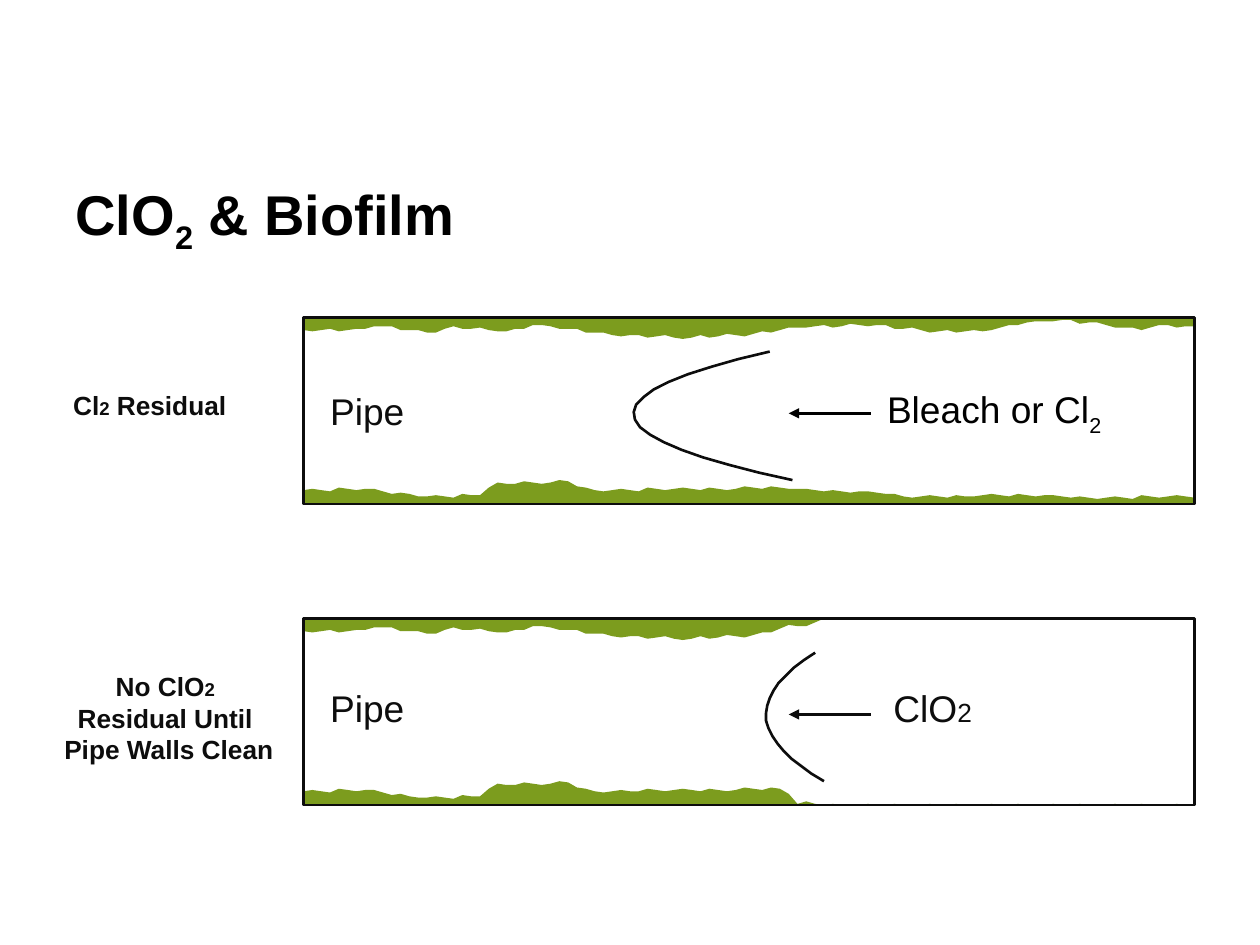
from collections import namedtuple
from itertools import cycle

from lxml import etree
from pptx import Presentation, util as u
from pptx.dml.color import RGBColor
from pptx.enum import shapes, text
from pptx.oxml.ns import qn

PX = 9144  # 100 px to the inch
COLORS = {"black": "000000", "ink": "0D0D0D", "film": "7C9C1E"}

PIPE_X, PIPE_W, PIPE_H = 241, 707, 148
FIRST_PIPE_Y, PIPE_PITCH = 252, 239
FRONT_DROP, ARROW_DROP = 27, 76  # below the top of the pipe
ARROW_FROM, ARROW_TO = 691, 626

# Main humps of the film: distance along the pipe -> thickness
TOP_THICK = {0: 10, 48: 10, 53: 6, 74: 8, 95: 12, 122: 8, 162: 11, 183: 6,
             218: 10, 247: 14, 306: 16, 359: 13}
TOP_LEFT = {401: 7, 454: 6, 497: 11, 539: 11, 567: 5, 597: 2, 630: 5,
            661: 9, 686: 6, 707: 8}
TOP_CLEANED = {384: 6, 401: 5, 414: 1, 424: 0, 707: 0}
BOTTOM_THICK = {0: 11, 46: 12, 78: 8, 102: 6, 138: 7, 152: 16, 211: 18,
                227: 11, 383: 13}
BOTTOM_LEFT = {401: 11, 460: 9, 472: 6, 586: 7, 620: 5, 707: 6}
BOTTOM_CLEANED = {392: 1, 401: 2, 420: 0, 707: 0}
RIPPLE = (0, 1, 0, -1, 1, 0, -1)  # small roughness laid over the humps
RIPPLE_STEP = 7

# Flow front: a parabola lying on its side
FRONT_H, FRONT_STEP, FRONT_AXIS, FRONT_CURVE = 102, 6, 49, 0.045

Run = namedtuple("Run", "words size sub", defaults=(None, False))
Label = namedtuple("Label", "x y w h")
Pipe = namedtuple("Pipe", "top bottom name_y tip_x stretch dose dose_at color")


def thickness(humps, x):
    """Straight-line value between the two humps on either side of x."""
    stations = sorted(humps)
    for a, b in zip(stations, stations[1:]):
        if a <= x <= b:
            return humps[a] + (humps[b] - humps[a]) * (x - a) / (b - a)


def rough_edge(humps):
    """Points (distance, thickness) at equal steps along the pipe."""
    distances = range(0, PIPE_W + 1, RIPPLE_STEP)
    return [(x, max(0, thickness(humps, x) + bump))
            for x, bump in zip(distances, cycle(RIPPLE))]


class Sketch:
    def __init__(self, s, font="Arial", line=1.5):
        self.s, self.font, self.line = s, font, line

    def color(self, name):
        return RGBColor.from_string(COLORS[name])

    def stroke(self, sp, color="ink"):
        sp.line.color.rgb = self.color(color)
        sp.line.width = u.Pt(self.line)

    def label(self, at, paras, size, color="ink", bold=False,
              align=text.PP_ALIGN.LEFT, inset=(0, 0), anchor=text.MSO_ANCHOR.TOP):
        sp = self.s.shapes.add_textbox(*(v * PX for v in at))
        tf = sp.text_frame
        tf.word_wrap = True
        tf.vertical_anchor = anchor
        tf.margin_left = tf.margin_right = inset[0] * PX
        tf.margin_top = tf.margin_bottom = inset[1] * PX
        for i, runs in enumerate(paras):
            p = tf.add_paragraph() if i else tf.paragraphs[0]
            p.alignment = align
            for run in runs:
                r = p.add_run()
                r.text = run.words
                r.font.name, r.font.bold = self.font, bold
                r.font.size = u.Pt(run.size or size)
                r.font.color.rgb = self.color(color)
                if run.sub:
                    r.font._element.set("baseline", "-25000")

    def outline(self, points, closed):
        fb = self.s.shapes.build_freeform(*points[0], scale=PX)
        fb.add_line_segments(points[1:], close=closed)
        sp = fb.convert_to_shape()
        sp.shadow.inherit = False
        return sp

    def film(self, wall_y, direction, humps):
        """Biofilm on a wall; direction 1 grows down, -1 grows up."""
        edge = [(PIPE_X + x, wall_y + direction * depth)
                for x, depth in rough_edge(humps)]
        wall = [(PIPE_X + PIPE_W, wall_y), (PIPE_X, wall_y)]
        sp = self.outline(edge + wall, True)
        sp.fill.solid()
        sp.fill.fore_color.rgb = self.color("film")
        sp.line.fill.background()

    def pipe(self, y):
        sp = self.s.shapes.add_shape(shapes.MSO_SHAPE.RECTANGLE, PIPE_X * PX, y * PX,
                                     PIPE_W * PX, PIPE_H * PX)
        sp.shadow.inherit = False
        sp.fill.background()
        self.stroke(sp)

    def front(self, tip_x, y, stretch):
        points = [(tip_x + stretch * FRONT_CURVE * (dy - FRONT_AXIS) ** 2, y + dy)
                  for dy in range(0, FRONT_H + 1, FRONT_STEP)]
        sp = self.outline(points, False)
        sp.fill.background()
        self.stroke(sp)

    def arrow(self, x1, x2, y, color):
        c = self.s.shapes.add_connector(shapes.MSO_CONNECTOR.STRAIGHT,
                                        x1 * PX, y * PX, x2 * PX, y * PX)
        self.stroke(c, color)
        etree.SubElement(c.line._get_or_add_ln(), qn("a:tailEnd"), type="triangle")
        etree.SubElement(c._element.spPr, qn("a:effectLst"))


def main():
    prs = Presentation()
    prs.slide_width, prs.slide_height = 1000 * PX, 750 * PX
    sk = Sketch(prs.slides.add_slide(prs.slide_layouts[6]))
    subscript, small_two = Run("2", sub=True), Run("2", 10.6)

    sk.label(Label(50, 134, 900, 78), [[Run("ClO"), subscript, Run(" & Biofilm")]],
             32, "black", True, inset=(10, 5), anchor=text.MSO_ANCHOR.MIDDLE)

    bleach = Pipe(top={**TOP_THICK, **TOP_LEFT}, bottom={**BOTTOM_THICK, **BOTTOM_LEFT},
                  name_y=308, tip_x=503, stretch=1, dose=[Run("Bleach or Cl"), subscript],
                  dose_at=Label(704, 307, 177, 42), color="black")
    dioxide = Pipe(top={**TOP_THICK, **TOP_CLEANED},
                   bottom={**BOTTOM_THICK, **BOTTOM_CLEANED},
                   name_y=544, tip_x=608, stretch=0.365, dose=[Run("ClO"), Run("2", 15)],
                   dose_at=Label(709, 544, 106, 42), color="ink")
    for i, pipe in enumerate((bleach, dioxide)):
        y = FIRST_PIPE_Y + i * PIPE_PITCH
        sk.film(y + PIPE_H, -1, pipe.bottom)
        sk.film(y, 1, pipe.top)
        sk.pipe(y)
        sk.label(Label(262, pipe.name_y, 103, 42), [[Run("Pipe")]], 21.2)
        sk.label(pipe.dose_at, [pipe.dose], 21.2, pipe.color)
        sk.arrow(ARROW_FROM, ARROW_TO, y + ARROW_DROP, pipe.color)
        sk.front(pipe.tip_x, y + FRONT_DROP, pipe.stretch)

    sk.label(Label(58, 309, 155, 27), [[Run("Cl"), small_two, Run(" Residual")]],
             15, bold=True)
    sk.label(Label(30, 532, 208, 79),
             [[Run("No ClO"), small_two, Run(" ")],
              [Run("Residual Until ")],
              [Run("Pipe Walls Clean")]],
             15, bold=True, align=text.PP_ALIGN.CENTER)
    prs.save("out.pptx")


if __name__ == "__main__":
    main()
